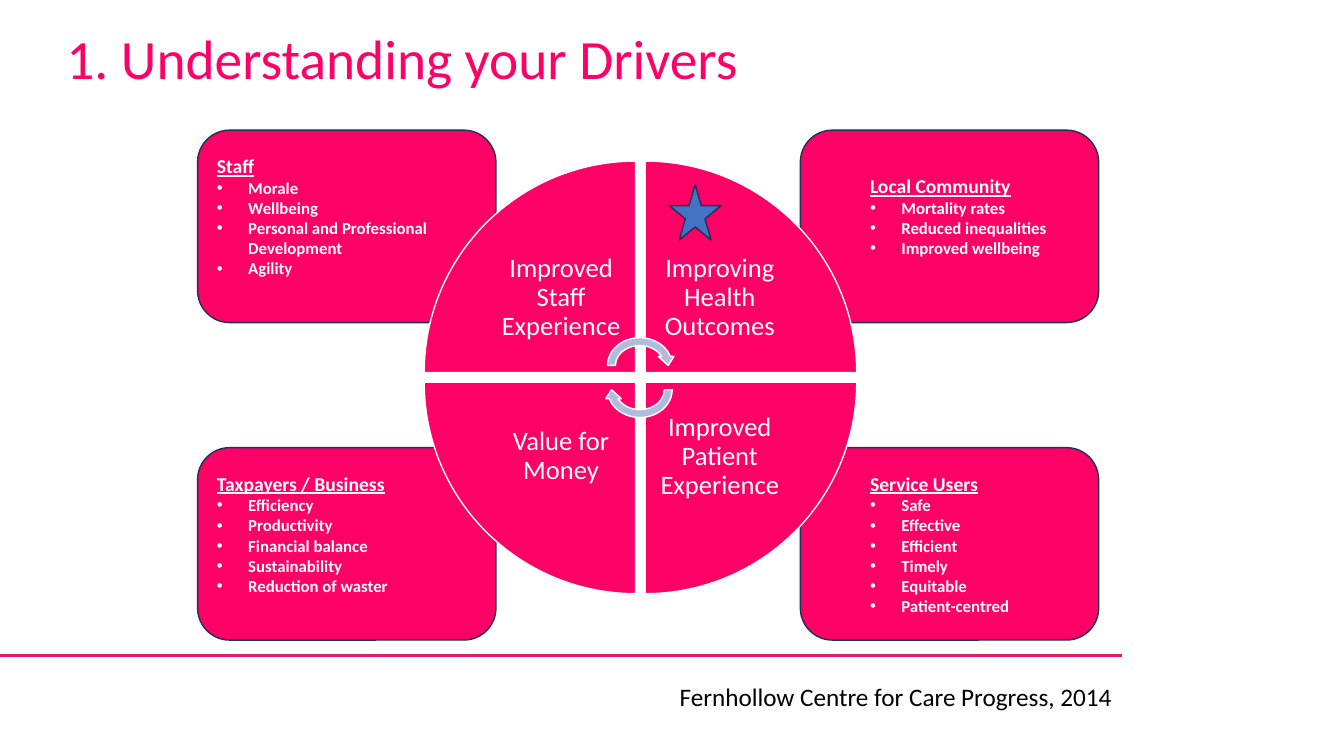
from dataclasses import dataclass

from lxml import etree
from pptx import Presentation
from pptx import util as u
from pptx.dml.color import RGBColor
from pptx.enum import shapes, text
from pptx.oxml.ns import qn


@dataclass(frozen=True)
class Theme:
    font: str = "Calibri"
    pink: str = "FF0066"
    rule: str = "E41F5F"
    navy: str = "1E3256"
    blue: str = "4472C4"
    pale_blue: str = "B0BCDE"
    white: str = "FFFFFF"
    black: str = "000000"
    title_size: float = 39.6
    wedge_size: float = 19
    source_size: float = 18
    heading_size: float = 14
    bullet_size: float = 12


class SlideBuilder:
    def __init__(self, presentation, theme):
        self.theme = theme
        self.slide = presentation.slides.add_slide(presentation.slide_layouts[5])

    def add_run(self, paragraph, words, size, color, bold=False, underline=False):
        run = paragraph.add_run()
        run.text = words
        font = run.font
        font.name = self.theme.font
        font.size = u.Pt(size)
        font.bold = bold
        font.underline = underline
        font.color.rgb = RGBColor.from_string(color)

    def title(self, words, left, top, width, height):
        title = self.slide.shapes.title
        title.left, title.top = u.Cm(left), u.Cm(top)
        title.width, title.height = u.Cm(width), u.Cm(height)
        frame = title.text_frame
        frame.auto_size = text.MSO_AUTO_SIZE.NONE
        frame.vertical_anchor = text.MSO_ANCHOR.MIDDLE
        paragraph = frame.paragraphs[0]
        paragraph.alignment = text.PP_ALIGN.LEFT
        paragraph.line_spacing = 0.9
        self.add_run(paragraph, words, self.theme.title_size, self.theme.pink)

    def rule(self, left, right, y):
        line = self.slide.shapes.add_connector(
            shapes.MSO_CONNECTOR.STRAIGHT, u.Cm(left), u.Cm(y), u.Cm(right), u.Cm(y))
        line.line.color.rgb = RGBColor.from_string(self.theme.rule)
        line.line.width = u.Pt(2.25)
        etree.SubElement(line._element.spPr, qn("a:effectLst"))

    def shape(self, kind, left, top, width, height, fill, outline, rotation=0):
        shape = self.slide.shapes.add_shape(
            kind, u.Cm(left), u.Cm(top), u.Cm(width), u.Cm(height))
        shape.shadow.inherit = False
        shape.rotation = rotation
        shape.fill.solid()
        shape.fill.fore_color.rgb = RGBColor.from_string(fill)
        shape.line.color.rgb = RGBColor.from_string(outline)
        shape.line.width = u.Pt(1)
        return shape

    def text_box(self, words, left, top, width, height, size, color, alignment):
        box = self.slide.shapes.add_textbox(
            u.Cm(left), u.Cm(top), u.Cm(width), u.Cm(height))
        box.text_frame.word_wrap = True
        paragraph = box.text_frame.paragraphs[0]
        paragraph.alignment = alignment
        self.add_run(paragraph, words, size, color)
        return box.text_frame

    def indent(self, paragraph, left, hanging=0.0, bullet=None):
        properties = paragraph._p.get_or_add_pPr()
        properties.set("marL", str(u.Cm(left)))
        properties.set("indent", str(-u.Cm(hanging)))
        if bullet:
            font = etree.SubElement(properties, qn("a:buFont"))
            font.set("typeface", "Arial")
            etree.SubElement(properties, qn("a:buChar")).set("char", bullet)

    def card(self, heading, items, left, top, width, height, margin, bottom_inset):
        theme = self.theme
        card = self.shape(shapes.MSO_SHAPE.ROUNDED_RECTANGLE,
                          left, top, width, height, theme.pink, theme.navy)
        frame = card.text_frame
        frame.word_wrap = True
        frame.vertical_anchor = text.MSO_ANCHOR.MIDDLE
        frame.margin_bottom = u.Cm(bottom_inset)
        paragraph = frame.paragraphs[0]
        paragraph.alignment = text.PP_ALIGN.LEFT
        self.indent(paragraph, margin)
        self.add_run(paragraph, heading, theme.heading_size, theme.white,
                     bold=True, underline=True)
        for item in items:
            paragraph = frame.add_paragraph()
            paragraph.alignment = text.PP_ALIGN.LEFT
            self.indent(paragraph, margin + 0.79, 0.79, "•")
            self.add_run(paragraph, item, theme.bullet_size, theme.white, bold=True)

    def wedge(self, words, column, row, rotation):
        """Draw one quarter of the circle, its label towards the centre."""
        theme = self.theme
        size, pitch, label = 5.33, 5.57, 3.76
        left, top = 10.69 + column * pitch, 4.06 + row * pitch
        self.shape(shapes.MSO_SHAPE.PIE_WEDGE, left, top, size, size,
                   theme.pink, theme.white, rotation)
        offset = size - label
        frame = self.text_box(words, left + (1 - column) * offset,
                              top + (1 - row) * offset, label, label,
                              theme.wedge_size, theme.white, text.PP_ALIGN.CENTER)
        frame.vertical_anchor = text.MSO_ANCHOR.MIDDLE
        frame.margin_left = frame.margin_right = u.Cm(0.38)
        frame.margin_top = frame.margin_bottom = u.Cm(0.38)
        frame.paragraphs[0].line_spacing = 0.9


CARD_COLUMNS = (4.98, 20.17)
CARD_ROWS = (3.28, 11.28)
CARD_MARGINS = (0, 1.27)
# heading, bullets, column, row, bottom inset
CARDS = [
    ("Service Users", ["Safe", "Effective", "Efficient", "Timely", "Equitable",
                       "Patient-centred"], 1, 1, 0.13),
    ("Staff", ["Morale", "Wellbeing", "Personal and Professional Development",
               "Agility"], 0, 0, 0.64),
    ("Taxpayers / Business", ["Efficiency", "Productivity", "Financial balance",
                              "Sustainability", "Reduction of waster"], 0, 1, 0.64),
    ("Local Community", ["Mortality rates", "Reduced inequalities",
                         "Improved wellbeing"], 1, 0, 0.64),
]
# label, column, row: clockwise from the top left
WEDGES = [
    ("Improved Staff Experience", 0, 0),
    ("Improving Health Outcomes", 1, 0),
    ("Improved Patient Experience", 1, 1),
    ("Value for Money", 0, 1),
]


def main():
    presentation = Presentation()
    presentation.slide_width, presentation.slide_height = u.Cm(33.87), u.Cm(19.05)
    theme = Theme()
    builder = SlideBuilder(presentation, theme)

    builder.rule(0, 28.27, 16.51)
    builder.title("1. Understanding your Drivers", 1.42, 0.66, 31.01, 1.8)
    for heading, items, column, row, bottom_inset in CARDS:
        builder.card(heading, items, CARD_COLUMNS[column], CARD_ROWS[row],
                     7.52, 4.85, CARD_MARGINS[column], bottom_inset)
    for quarter, (label, column, row) in enumerate(WEDGES):
        builder.wedge(label, column, row, 90 * quarter)
    for top, rotation in ((8.41, 0), (9.02, 180)):
        builder.shape(shapes.MSO_SHAPE.CIRCULAR_ARROW, 15.21, top, 1.83, 1.6,
                      theme.pale_blue, theme.white, rotation)
    source = builder.text_box("Fernhollow Centre for Care Progress, 2014",
                              1.85, 17.04, 26.42, 1.02, theme.source_size,
                              theme.black, text.PP_ALIGN.RIGHT)
    source.auto_size = text.MSO_AUTO_SIZE.SHAPE_TO_FIT_TEXT
    builder.shape(shapes.MSO_SHAPE.STAR_5_POINT, 16.87, 4.65, 1.3, 1.4,
                  theme.blue, theme.navy)

    presentation.save("out.pptx")


if __name__ == "__main__":
    main()
